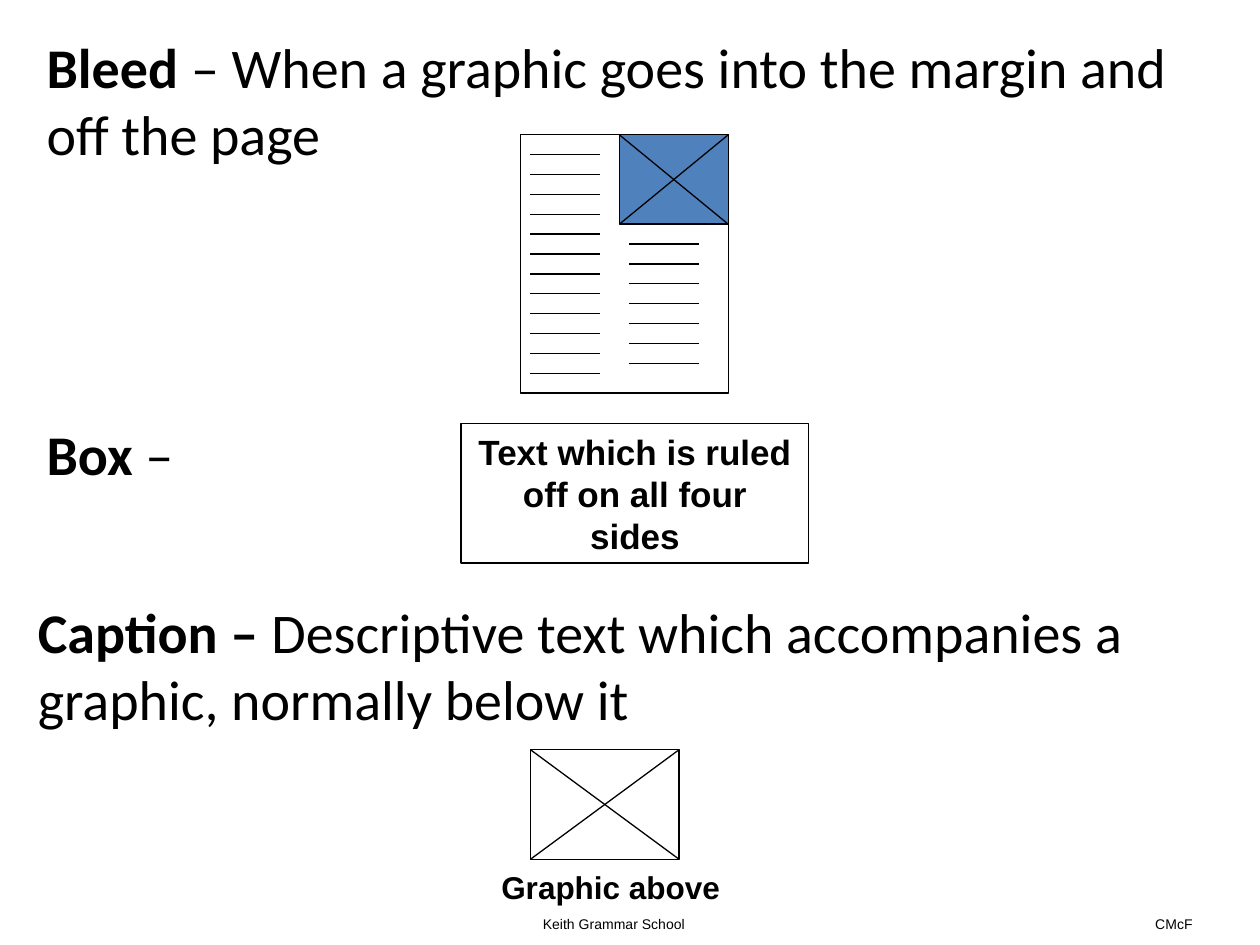
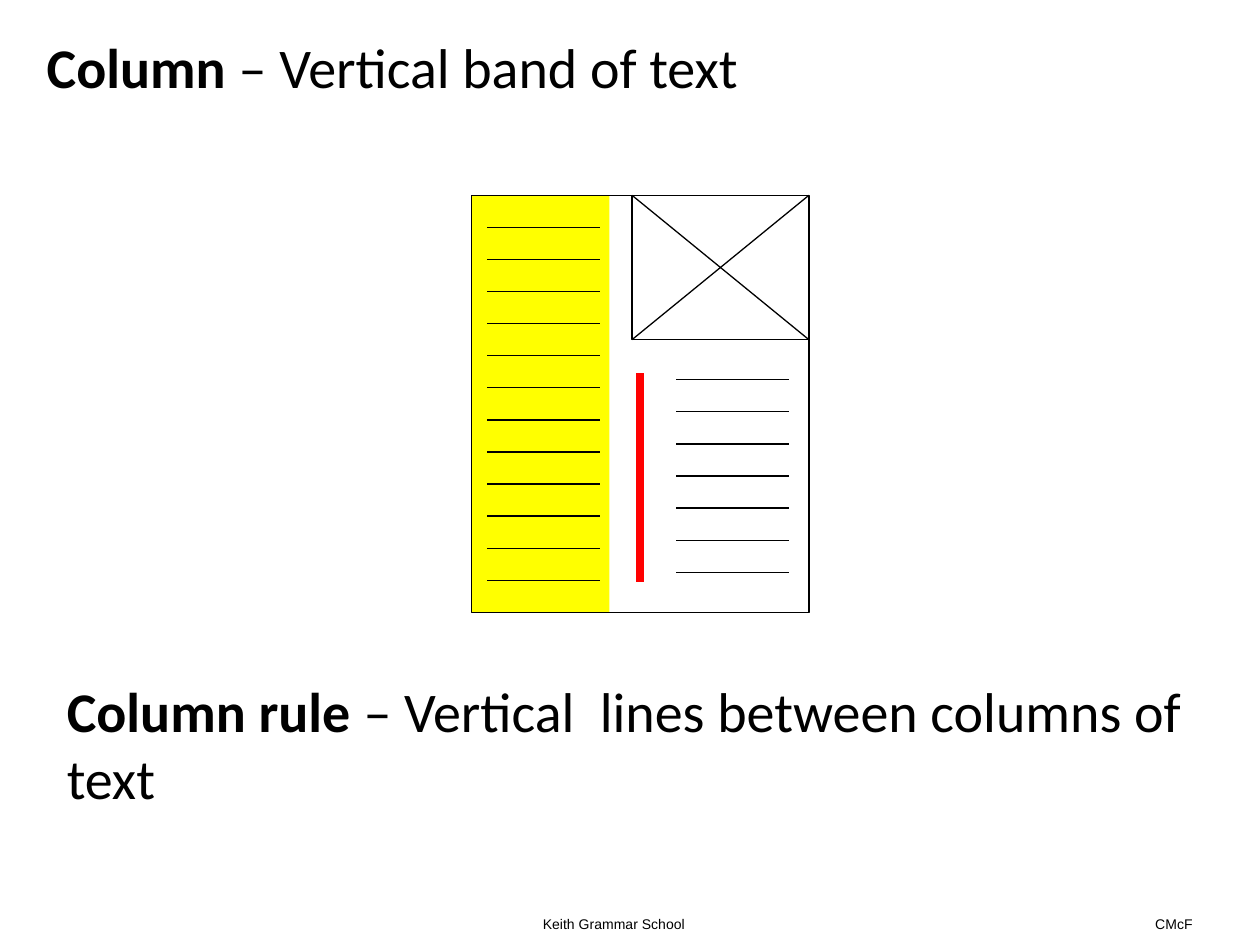
from dataclasses import dataclass

from lxml.etree import SubElement
from pptx import Presentation
from pptx.dml.color import RGBColor
from pptx.enum.shapes import MSO_CONNECTOR, MSO_SHAPE
from pptx.enum.text import MSO_ANCHOR, MSO_AUTO_SIZE, PP_ALIGN
from pptx.oxml.ns import qn
from pptx.util import Inches, Pt

COLORS = {
    "ink": "000000",
    "paper": "FFFFFF",
    "graphic": "4F81BD",
    "column": "FFFF00",
    "rule": "FF0000",
}
HEADING_FONT = "Calibri"
LABEL_FONT = "Arial"
TWO_DEFINITIONS, THREE_DEFINITIONS = 1, 3  # layouts with one and two bodies
PAGE_GRID = (21, 26)


@dataclass
class Box:
    """A rectangle in inches, divided into columns and rows."""
    left: float
    top: float
    width: float
    height: float
    columns: float = 1
    rows: float = 1

    def point(self, column, row):
        return (Inches(self.left + self.width * column / self.columns),
                Inches(self.top + self.height * row / self.rows))

    def area(self, column, row, width, height, grid=(1, 1)):
        column_width = self.width / self.columns
        row_height = self.height / self.rows
        return Box(self.left + column * column_width, self.top + row * row_height,
                   width * column_width, height * row_height, *grid)

    def frame(self):
        return [Inches(length) for length in (self.left, self.top, self.width, self.height)]


SLIDE = Box(0, 0, 10, 7.5, columns=100, rows=75)


def color(name):
    return RGBColor.from_string(COLORS[name])


def set_font(paragraph, name, size, bold=None):
    font = paragraph.font
    font.name, font.size, font.bold = name, Pt(size), bold
    font.color.rgb = color("ink")


def add_line(slide, start, end, line_color="ink", width=0.75):
    connector = slide.shapes.add_connector(MSO_CONNECTOR.STRAIGHT, *start, *end)
    connector.line.color.rgb = color(line_color)
    connector.line.width = Pt(width)
    SubElement(connector.element.spPr, qn("a:effectLst"))


def add_rectangle(slide, box, fill=None, outlined=True):
    shape = slide.shapes.add_shape(MSO_SHAPE.RECTANGLE, *box.frame())
    shape.shadow.inherit = False
    if fill:
        shape.fill.solid()
        shape.fill.fore_color.rgb = color(fill)
    else:
        shape.fill.background()
    if outlined:
        shape.line.color.rgb = color("ink")
        shape.line.width = Pt(0.75)
    else:
        shape.line.fill.background()
    return shape


def add_label(slide, box, text, size, bold=False):
    label = slide.shapes.add_textbox(*box.frame())
    label.text_frame.word_wrap = False
    label.text_frame.auto_size = MSO_AUTO_SIZE.SHAPE_TO_FIT_TEXT
    paragraph = label.text_frame.paragraphs[0]
    paragraph.add_run().text = text
    set_font(paragraph, LABEL_FONT, size, bold)
    return label


def add_footers(presentation, slide):
    """Put the footers on the master, where all slides show them."""
    for column, width, text in ((42.1, 13.3, "Keith Grammar School"), (90.7, 5, "CMcF")):
        footer = add_label(slide, SLIDE.area(column, 72.2, width, 2.3), text, 8)
        presentation.slide_master.shapes.element.append(footer.element)


def write_definition(placeholder, column, row, term, meaning):
    box = SLIDE.area(column, row, 92.9, 11.8)
    placeholder.left, placeholder.top, placeholder.width, placeholder.height = box.frame()
    frame = placeholder.text_frame
    frame.word_wrap = True
    frame.auto_size = MSO_AUTO_SIZE.NONE
    frame.vertical_anchor = MSO_ANCHOR.TOP
    paragraph = frame.paragraphs[0]
    paragraph.alignment = PP_ALIGN.LEFT
    paragraph.space_before = Pt(0)
    properties = paragraph._p.get_or_add_pPr()
    properties.set("marL", "0")
    properties.set("indent", "0")
    SubElement(properties, qn("a:buNone"))
    set_font(paragraph, HEADING_FONT, 32)
    for text, bold in ((term, True), (meaning, False)):
        run = paragraph.add_run()
        run.text = text
        run.font.bold = bold


def add_definition_slide(presentation, layout, definitions):
    slide = presentation.slides.add_slide(presentation.slide_layouts[layout])
    for placeholder, definition in zip(slide.placeholders, definitions):
        write_definition(placeholder, *definition)
    return slide


def draw_crossed_graphic(slide, box, fill=None):
    add_rectangle(slide, box, fill)
    add_line(slide, box.point(0, 0), box.point(1, 1))
    add_line(slide, box.point(0, 1), box.point(1, 0))


def draw_text_lines(slide, page, column, first_row, count):
    for index in range(count):
        row = first_row + 2 * index
        add_line(slide, page.point(column, row), page.point(column + 7, row))


def draw_page(slide, page, second_column, second_row, page_fill=None, graphic_fill=None):
    """Draw a two-column page whose graphic bleeds off the top right corner."""
    add_rectangle(slide, page, page_fill)
    draw_crossed_graphic(slide, page.area(10, 0, 11, 9), graphic_fill)
    draw_text_lines(slide, page, 1, 2, 12)
    draw_text_lines(slide, page, second_column, second_row, 7)


def draw_ruled_box(slide, box, text):
    shape = add_rectangle(slide, box)
    frame = shape.text_frame
    frame.word_wrap = True
    frame.vertical_anchor = MSO_ANCHOR.MIDDLE
    paragraph = frame.paragraphs[0]
    paragraph.alignment = PP_ALIGN.CENTER
    paragraph.add_run().text = text
    set_font(paragraph, LABEL_FONT, 20, True)


def build_bleed_box_caption(presentation):
    slide = add_definition_slide(presentation, THREE_DEFINITIONS, (
        (2.7, 2.1, "Bleed ", "– When a graphic goes into the margin and off the page"),
        (2.7, 32.8, "Box ", "–"),
        (2, 46.9, "Caption – ",
         "Descriptive text which accompanies a graphic, normally below it"),
    ))
    draw_page(slide, SLIDE.area(41.3, 10.7, 16.5, 20.5, PAGE_GRID), 11, 11,
              "paper", "graphic")
    draw_ruled_box(slide, SLIDE.area(36.6, 33.6, 27.6, 11.1),
                   "Text which is ruled off on all four sides")
    draw_crossed_graphic(slide, SLIDE.area(42.1, 59.5, 11.8, 8.7), "paper")
    add_label(slide, SLIDE.area(38.8, 68.4, 20.1, 4), "Graphic above", 18, True)
    return slide


def build_column_and_rule(presentation):
    slide = add_definition_slide(presentation, TWO_DEFINITIONS, (
        (2.7, 2.1, "Column ", "– Vertical band of text"),
        (4.3, 53.2, "Column rule ", "– Vertical  lines between columns of text"),
    ))
    page = SLIDE.area(37.4, 15.5, 26.8, 33.1, PAGE_GRID)
    add_rectangle(slide, page.area(0, 0, 8.6, 26), "column", outlined=False)
    draw_page(slide, page, 12.75, 11.5)
    add_line(slide, page.point(10.5, 11.1), page.point(10.5, 24.1), "rule", 4.5)


def main():
    presentation = Presentation()
    presentation.slide_width = Inches(SLIDE.width)
    presentation.slide_height = Inches(SLIDE.height)
    first_slide = build_bleed_box_caption(presentation)
    add_footers(presentation, first_slide)
    build_column_and_rule(presentation)
    presentation.save("out.pptx")


if __name__ == "__main__":
    main()
